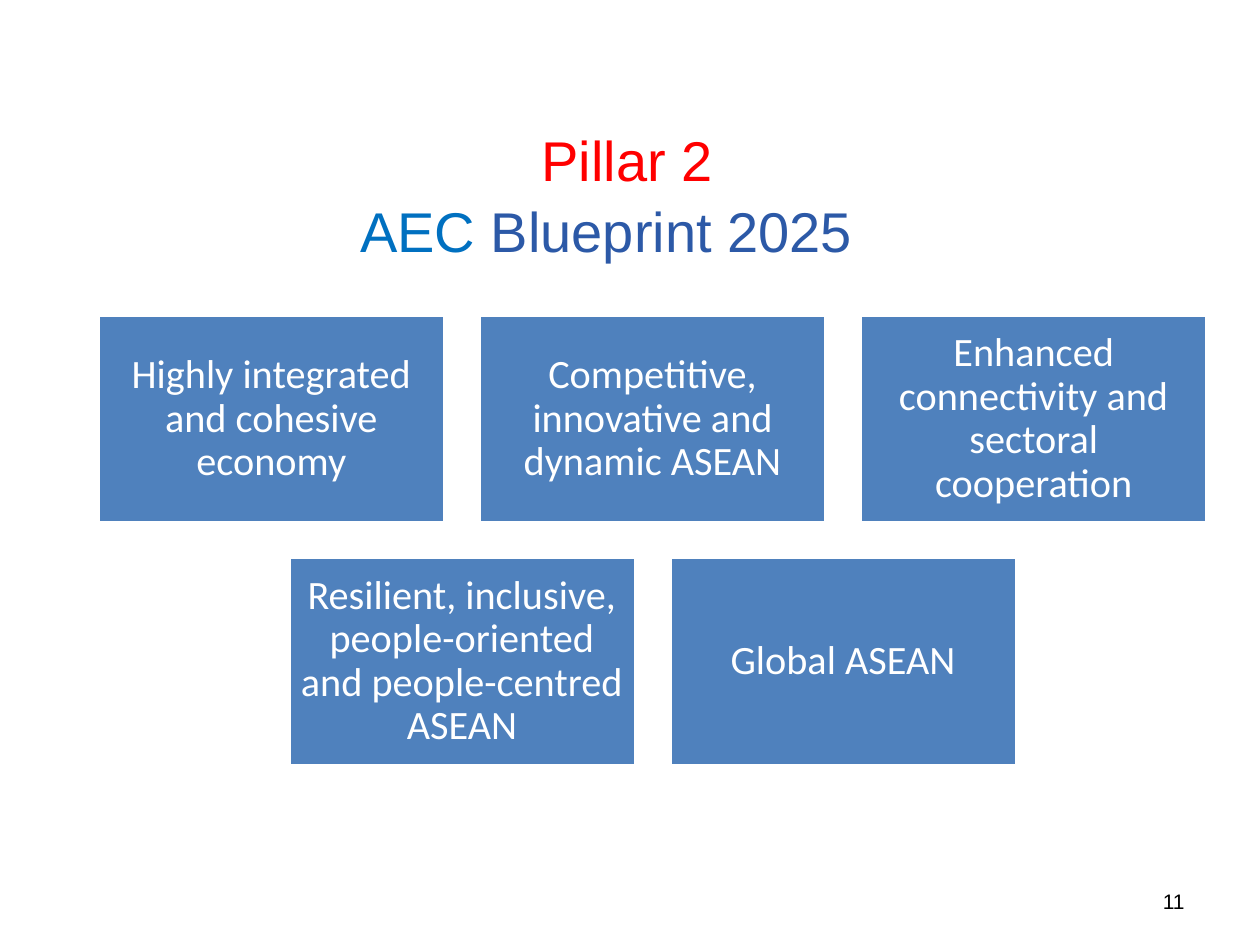
from pptx import Presentation
from pptx import util as u
from pptx.dml.color import RGBColor
from pptx.enum import shapes, text

deck = Presentation()
deck.slide_width, deck.slide_height = u.Inches(10), u.Inches(7.5)
page = deck.slides.add_slide(deck.slide_layouts[6])


def color(value):
    return RGBColor.from_string(value)


def write(para, words, size, hue, font="Arial"):
    span = para.add_run()
    span.text = words
    span.font.name, span.font.size = font, u.Pt(size)
    span.font.color.rgb = color(hue)


# Title: two lines, each with its own indent
title = page.shapes.add_textbox(u.Inches(0.78), u.Inches(0.92), u.Inches(7.81), u.Inches(1.25))
frame = title.text_frame
frame.word_wrap = True
frame.vertical_anchor = text.MSO_ANCHOR.MIDDLE
title_lines = [
    (3.42, [("Pillar 2", "FF0000")]),
    (1.98, [("AEC", "0070C0"), (" Blueprint 2025", "2C59A7")]),
]
for number, (indent, parts) in enumerate(title_lines):
    para = frame.add_paragraph() if number else frame.paragraphs[0]
    para._p.get_or_add_pPr().set("marL", str(u.Inches(indent)))
    if number:
        para.space_before = u.Pt(2)
    for words, hue in parts:
        write(para, words, 32, hue)

# Blueprint characteristics: rows of equal cards, the second row centred
card_width, card_height = 2.75, 1.65
gap = 0.275
grid_left, grid_top, grid_columns = 0.78, 2.5, 3
card_rows = [
    ["Highly integrated and cohesive economy",
     "Competitive, innovative and dynamic ASEAN",
     "Enhanced connectivity and sectoral cooperation"],
    ["Resilient, inclusive, people-oriented and people-centred ASEAN",
     "Global ASEAN"],
]
for row, labels in enumerate(card_rows):
    shift = (grid_columns - len(labels)) / 2
    for column, label in enumerate(labels):
        left = grid_left + (column + shift) * (card_width + gap)
        top = grid_top + row * (card_height + gap)
        card = page.shapes.add_shape(shapes.MSO_SHAPE.RECTANGLE, u.Inches(left), u.Inches(top),
                                     u.Inches(card_width), u.Inches(card_height))
        card.shadow.inherit = False
        card.fill.solid()
        card.fill.fore_color.rgb = color("4F81BD")
        card.line.color.rgb = color("FFFFFF")
        card.line.width = u.Pt(2)
        frame = card.text_frame
        frame.word_wrap = True
        frame.vertical_anchor = text.MSO_ANCHOR.MIDDLE
        frame.margin_left = frame.margin_right = u.Inches(0.08)
        frame.margin_top = frame.margin_bottom = u.Inches(0.1)
        para = frame.paragraphs[0]
        para.alignment = text.PP_ALIGN.CENTER
        para.line_spacing = 0.9
        write(para, label, 23, "FFFFFF", font="Calibri")

# Page number
number_box = page.shapes.add_textbox(u.Inches(7.17), u.Inches(6.95), u.Inches(2.33), u.Inches(0.4))
frame = number_box.text_frame
frame.word_wrap = True
frame.vertical_anchor = text.MSO_ANCHOR.MIDDLE
frame.paragraphs[0].alignment = text.PP_ALIGN.RIGHT
write(frame.paragraphs[0], "11", 12, "000000")

deck.save("out.pptx")
